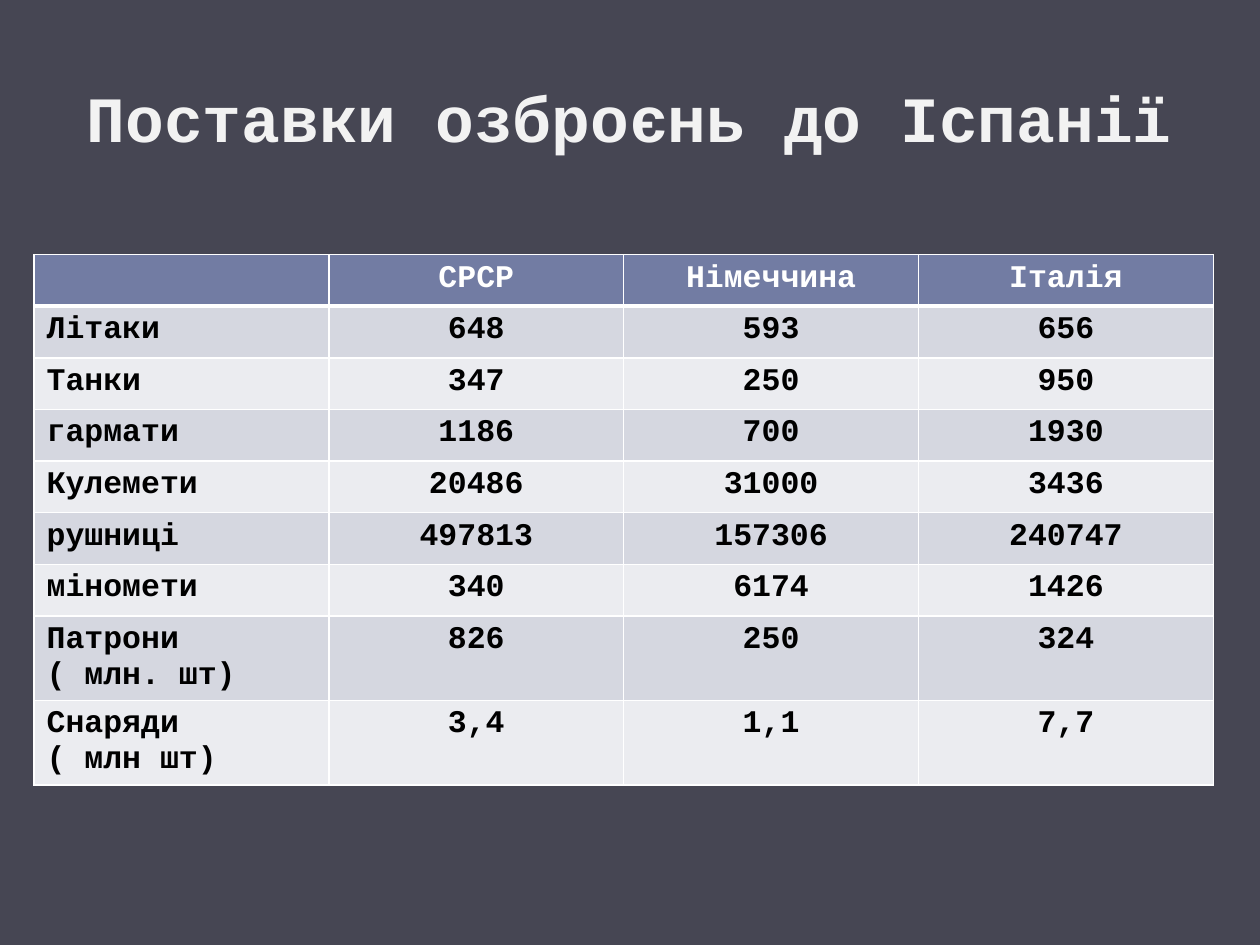
"""Build a slide with a table of arms deliveries to Spain."""
from lxml.etree import SubElement
from pptx import Presentation
from pptx.dml.color import RGBColor
from pptx.enum.text import MSO_ANCHOR, PP_ALIGN
from pptx.oxml.ns import qn
from pptx.util import Inches, Pt

FONT = "Courier New"
COLORS = {
    "background": "464653", "title": "F2F2F2", "header": "727CA3",
    "odd": "D5D7E0", "even": "EBECF0", "white": "FFFFFF", "black": "000000",
}
ROWS = [
    ("", "СРСР", "Німеччина", "Італія"),
    ("Літаки", "648", "593", "656"),
    ("Танки", "347", "250", "950"),
    ("гармати", "1186", "700", "1930"),
    ("Кулемети", "20486", "31000", "3436"),
    ("рушниці", "497813", "157306", "240747"),
    ("міномети", "340", "6174", "1426"),
    ("Патрони\n( млн. шт)", "826", "250", "324"),
    ("Снаряди\n( млн шт)", "3,4", "1,1", "7,7"),
]
COL_WIDTH, ROW_HEIGHT, LINE_HEIGHT = 2.34, 0.41, 0.26


def rgb(name):
    return RGBColor.from_string(COLORS[name])


def format_text(tf, size, color, align):
    for p in tf.paragraphs:
        p.alignment = align
        for r in p.runs:
            r.font.name, r.font.size, r.font.bold = FONT, Pt(size), True
            r.font.color.rgb = rgb(color)


def set_borders(cell, top, bottom):
    tc_pr = cell._tc.get_or_add_tcPr()
    for side, width in (("L", 1), ("R", 1), ("T", top), ("B", bottom)):
        ln = SubElement(tc_pr, qn(f"a:ln{side}"), w=str(Pt(width)))
        fill = SubElement(ln, qn("a:solidFill"))
        SubElement(fill, qn("a:srgbClr"), val=COLORS["white"])


def add_title(s, text):
    title = s.shapes.title
    title.left, title.top = Inches(0.5), Inches(0.3)
    title.width, title.height = Inches(9), Inches(1.25)
    tf = title.text_frame
    tf.text = text
    tf.vertical_anchor = MSO_ANCHOR.MIDDLE
    format_text(tf, 36.9, "title", PP_ALIGN.CENTER)


def fill_cell(cell, text, row, col):
    set_borders(cell, 3 if row == 1 else 1, 3 if row == 0 else 1)
    cell.fill.solid()
    cell.fill.fore_color.rgb = rgb("header" if row == 0 else "odd" if row % 2 else "even")
    cell.text_frame.text = text
    format_text(cell.text_frame, 18, "black" if row else "white",
                PP_ALIGN.CENTER if col else PP_ALIGN.LEFT)


def add_deliveries_table(s, rows):
    heights = [Inches(ROW_HEIGHT + LINE_HEIGHT * row[0].count("\n")) for row in rows]
    n_cols = len(rows[0])
    table = s.shapes.add_table(len(rows), n_cols, Inches(0.27), Inches(2.02),
                               Inches(COL_WIDTH * n_cols), sum(heights)).table
    for column in table.columns:
        column.width = Inches(COL_WIDTH)
    for i, (row, height) in enumerate(zip(rows, heights)):
        table.rows[i].height = height
        for j, text in enumerate(row):
            fill_cell(table.cell(i, j), text, i, j)


def main():
    prs = Presentation()
    prs.slide_width, prs.slide_height = Inches(10), Inches(7.5)
    s = prs.slides.add_slide(prs.slide_layouts[5])
    s.background.fill.solid()
    s.background.fill.fore_color.rgb = rgb("background")
    add_title(s, "Поставки озброєнь до Іспанії")
    add_deliveries_table(s, ROWS)
    prs.save("out.pptx")


if __name__ == "__main__":
    main()
